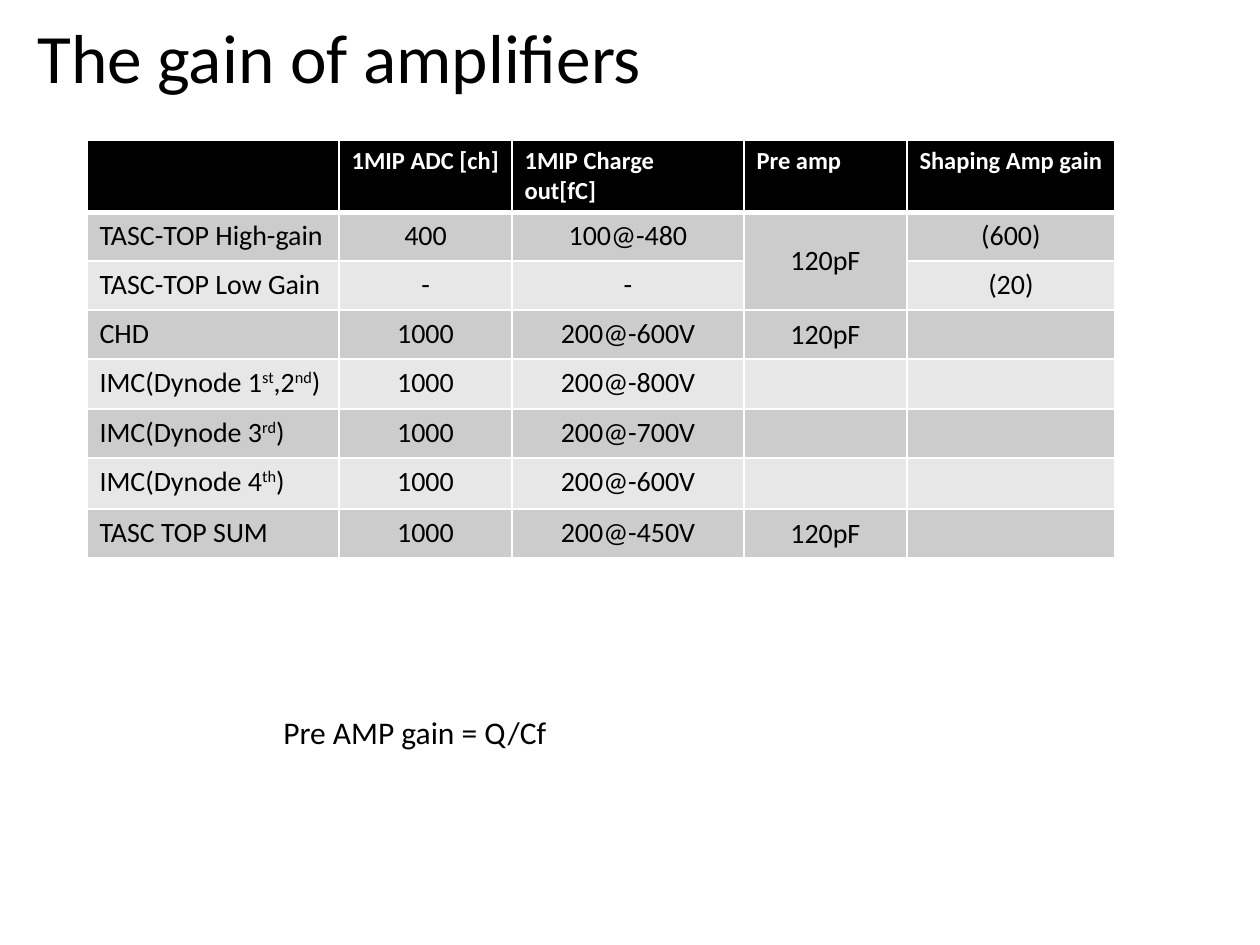
from dataclasses import dataclass

from lxml.etree import SubElement
from pptx import Presentation
from pptx.dml.color import RGBColor
from pptx.enum.text import MSO_ANCHOR, PP_ALIGN
from pptx.oxml.ns import qn
from pptx.util import Pt

EMU_PER_PX = 914400 / 126
NO_STYLE = "{2D5ABB26-0587-4C30-8999-92F81FD0307C}"


@dataclass(frozen=True)
class Theme:
    font: str = "Calibri"
    black: str = "000000"
    white: str = "FFFFFF"
    odd_row: str = "CCCCCC"
    even_row: str = "E7E7E7"
    title_size: float = 39.6
    note_size: float = 18
    header_size: float = 14
    body_size: float = 16
    rule: float = 1
    header_rule: float = 3


@dataclass(frozen=True)
class Label:
    text: str
    left: int
    top: int
    width: int
    height: int
    size: float
    anchor: MSO_ANCHOR = MSO_ANCHOR.TOP


@dataclass(frozen=True)
class Channel:
    name: str  # text between carets is superscript
    adc: str
    charge: str
    pre_amp: str = ""
    shaping: str = ""


THEME = Theme()
LABELS = [
    Label("The gain of amplifiers", 25, 18, 1087, 76, THEME.title_size, MSO_ANCHOR.MIDDLE),
    Label("Pre AMP gain = Q/Cf", 271, 707, 689, 50, THEME.note_size),
]
HEADER = Channel("", "1MIP ADC [ch]", "1MIP Charge out[fC]", "Pre amp", "Shaping Amp gain")
CHANNELS = [
    Channel("TASC-TOP High-gain", "400", "100@-480", "120pF", "(600)"),
    Channel("TASC-TOP Low Gain", "-", "-", "", "(20)"),
    Channel("CHD", "1000", "200@-600V", "120pF"),
    Channel("IMC(Dynode 1^st^,2^nd^)", "1000", "200@-800V"),
    Channel("IMC(Dynode 3^rd^)", "1000", "200@-700V"),
    Channel("IMC(Dynode 4^th^)", "1000", "200@-600V"),
    Channel("TASC TOP SUM", "1000", "200@-450V", "120pF"),
]
TABLE_LEFT, TABLE_TOP = 87, 140
COLUMNS = [252, 173, 232, 163, 208]
ROWS = [49, 49, 49, 49, 50, 49, 51, 49]
PRE_AMP = 3


def px(n: int) -> int:
    return round(n * EMU_PER_PX)


def write(p, text: str, size: float, color: str, bold: bool = False) -> None:
    """Fill a paragraph, raising the parts that stand between carets."""
    p.font.name = THEME.font
    p.font.size = Pt(size)
    p.font.bold = bold
    p.font.color.rgb = RGBColor.from_string(color)
    for i, part in enumerate(text.split("^")):
        if part:
            r = p.add_run()
            r.text = part
            if i % 2:
                r.font._element.set("baseline", "30000")


def add_label(s, label: Label) -> None:
    box = (label.left, label.top, label.width, label.height)
    tf = s.shapes.add_textbox(*map(px, box)).text_frame
    tf.word_wrap = True
    tf.vertical_anchor = label.anchor
    write(tf.paragraphs[0], label.text, label.size, THEME.black)


def style_cell(cell, fill: str, top: float, bottom: float) -> None:
    tc_pr = cell._tc.get_or_add_tcPr()
    for side, width in (("L", THEME.rule), ("R", THEME.rule), ("T", top), ("B", bottom)):
        line = SubElement(tc_pr, qn(f"a:ln{side}"), w=str(Pt(width)))
        SubElement(SubElement(line, qn("a:solidFill")), qn("a:srgbClr"), val=THEME.white)
    cell.fill.solid()
    cell.fill.fore_color.rgb = RGBColor.from_string(fill)


def add_row(table, row: int, channel: Channel) -> None:
    header = row == 0
    fill = THEME.black if header else THEME.odd_row if row % 2 else THEME.even_row
    top = THEME.header_rule if row == 1 else THEME.rule
    bottom = THEME.header_rule if header else THEME.rule
    texts = (channel.name, channel.adc, channel.charge, channel.pre_amp, channel.shaping)
    for col, text in enumerate(texts):
        cell = table.cell(row, col)
        style_cell(cell, fill, top, bottom)
        p = cell.text_frame.paragraphs[0]
        if header:
            write(p, text, THEME.header_size, THEME.white, bold=True)
            continue
        write(p, text, THEME.body_size, THEME.black)
        if col:
            p.alignment = PP_ALIGN.CENTER
        if col == PRE_AMP:
            cell.vertical_anchor = MSO_ANCHOR.MIDDLE


def add_gain_table(s) -> None:
    box = (TABLE_LEFT, TABLE_TOP, sum(COLUMNS), sum(ROWS))
    table = s.shapes.add_table(len(ROWS), len(COLUMNS), *map(px, box)).table
    table._tbl.tblPr.find(qn("a:tableStyleId")).text = NO_STYLE
    table.horz_banding = False
    for column, width in zip(table.columns, COLUMNS):
        column.width = px(width)
    for row, height in zip(table.rows, ROWS):
        row.height = px(height)
    for i, channel in enumerate([HEADER, *CHANNELS]):
        add_row(table, i, channel)
    table.cell(1, PRE_AMP).merge(table.cell(2, PRE_AMP))


def main() -> None:
    prs = Presentation()
    prs.slide_width, prs.slide_height = px(1260), px(945)
    s = prs.slides.add_slide(prs.slide_layouts[6])
    add_gain_table(s)
    for label in LABELS:
        add_label(s, label)
    prs.save("out.pptx")


if __name__ == "__main__":
    main()
